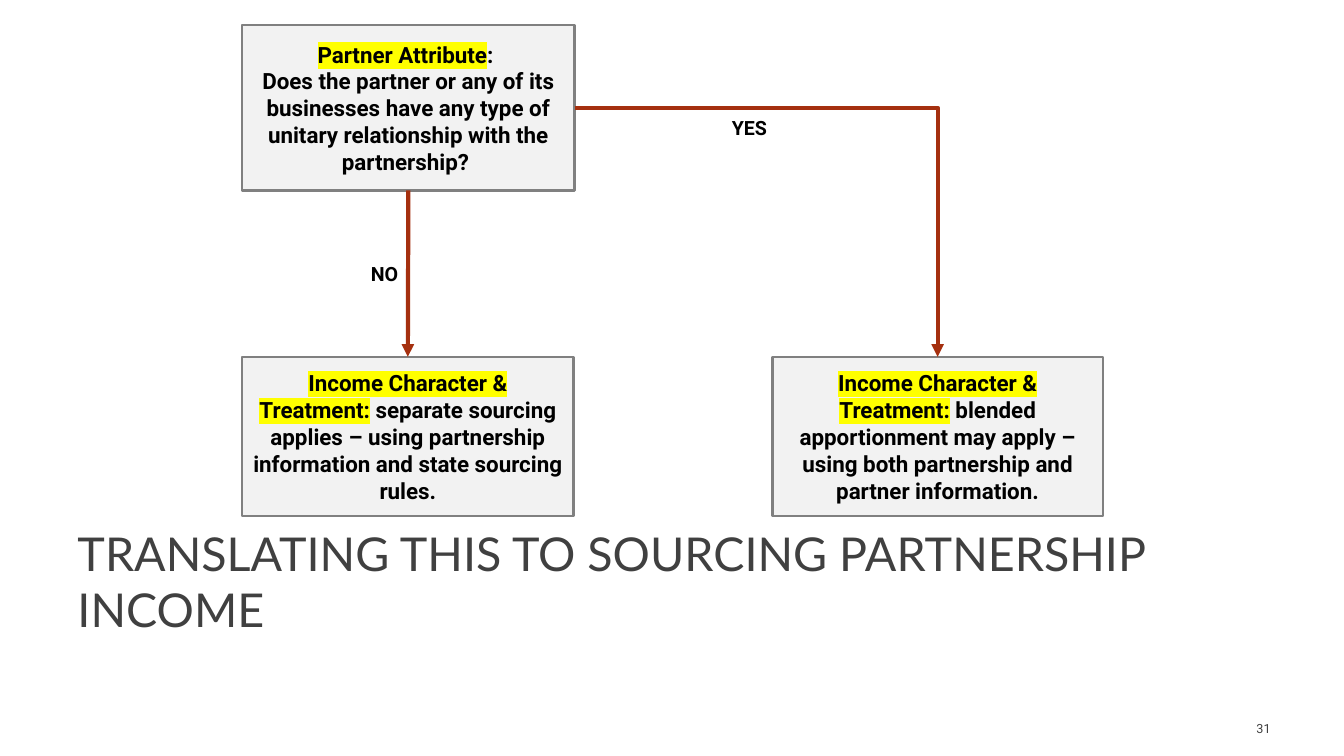
from dataclasses import dataclass

from lxml.etree import SubElement
from pptx import Presentation
from pptx.dml.color import RGBColor
from pptx.enum.shapes import MSO_CONNECTOR, MSO_SHAPE
from pptx.enum.text import MSO_ANCHOR, PP_ALIGN
from pptx.oxml.ns import qn
from pptx.util import Pt

PX = 9144
TOP, BOTTOM, RIGHT = 0, 2, 3


@dataclass(frozen=True)
class Theme:
    """Colours, fonts and type sizes of the slide."""

    ink: str = "000000"
    muted: str = "404040"
    panel: str = "F2F2F2"
    border: str = "808080"
    arrow: str = "A5300F"
    marker: str = "FFFF00"
    body_font: str = "Roboto"
    title_font: str = "Lato"
    title_size: float = 33.3
    box_size: float = 16
    label_size: float = 14
    number_size: float = 9


class DecisionSlide:
    """Draws the parts of a decision flow on one slide."""

    def __init__(self, slide, theme):
        """Keep the slide and its theme."""
        self.shapes = slide.shapes
        self.theme = theme

    def run(self, paragraph, text, size, color, font, bold=False, marked=False):
        """Add one styled run, highlighted if marked."""
        run = paragraph.add_run()
        run.text = text
        run.font.size = Pt(size)
        run.font.bold = bold
        run.font.color.rgb = RGBColor.from_string(color)
        if marked:
            properties = run.font._element
            highlight = SubElement(properties, qn("a:highlight"))
            SubElement(highlight, qn("a:srgbClr"), val=self.theme.marker)
        run.font.name = font

    def box(self, left, top, width, height, heading, *lines):
        """Add a bordered box with a highlighted heading and its statement."""
        theme = self.theme
        box = self.shapes.add_shape(
            MSO_SHAPE.RECTANGLE, left * PX, top * PX, width * PX, height * PX)
        box.shadow.inherit = False
        box.fill.solid()
        box.fill.fore_color.rgb = RGBColor.from_string(theme.panel)
        box.line.color.rgb = RGBColor.from_string(theme.border)
        box.line.width = Pt(1.75)
        frame = box.text_frame
        frame.word_wrap = True
        frame.vertical_anchor = MSO_ANCHOR.MIDDLE
        statement = frame.paragraphs[0]
        statement.alignment = PP_ALIGN.CENTER
        style = (theme.box_size, theme.ink, theme.body_font, True)
        self.run(statement, heading, *style, marked=True)
        for index, line in enumerate(lines):
            if index:
                statement.add_line_break()
            self.run(statement, line, *style)
        return box

    def text(self, left, top, width, height, text, size, color, font,
             bold=False, anchor=MSO_ANCHOR.TOP, align=PP_ALIGN.LEFT):
        """Add a text box with one paragraph."""
        frame = self.shapes.add_textbox(
            left * PX, top * PX, width * PX, height * PX).text_frame
        frame.word_wrap = True
        frame.vertical_anchor = anchor
        frame.paragraphs[0].alignment = align
        self.run(frame.paragraphs[0], text, size, color, font, bold)

    def label(self, left, top, width, answer):
        """Add the answer beside an arrow."""
        theme = self.theme
        self.text(left, top, width, 34, answer,
                  theme.label_size, theme.ink, theme.body_font, bold=True)

    def arrow(self, source, source_side, target, kind, preset):
        """Join a side of the source box to the top of the target box."""
        arrow = self.shapes.add_connector(kind, 0, 0, 0, 0)
        arrow.begin_connect(source, source_side)
        arrow.end_connect(target, TOP)
        arrow.line.color.rgb = RGBColor.from_string(self.theme.arrow)
        arrow.line.width = Pt(3)
        properties = arrow._element.spPr
        properties.find(qn("a:prstGeom")).set("prst", preset)
        SubElement(properties.find(qn("a:ln")), qn("a:tailEnd"), type="triangle")
        SubElement(properties, qn("a:effectLst"))


def main():
    """Build and save the slide."""
    deck = Presentation()
    deck.slide_width, deck.slide_height = 1333 * PX, 750 * PX
    theme = Theme()
    page = DecisionSlide(deck.slides.add_slide(deck.slide_layouts[6]), theme)

    outcome = "Income Character & Treatment:"
    blended = page.box(
        766, 354, 328, 158, outcome,
        " blended apportionment may apply – using both partnership and partner information.")
    separate = page.box(
        240, 354, 329, 158, outcome,
        " separate sourcing applies – using partnership information and state sourcing rules.")
    question = page.box(
        240, 25, 330, 164, "Partner Attribute", ": ",
        "Does the partner or any of its businesses have any type of unitary "
        "relationship with the partnership? ")

    page.arrow(question, BOTTOM, separate, MSO_CONNECTOR.STRAIGHT, "line")
    page.arrow(question, RIGHT, blended, MSO_CONNECTOR.ELBOW, "bentConnector2")
    page.label(358, 255, 51, "NO")
    page.label(716, 110, 63, "YES")

    page.text(67, 566, 1202, 71, "TRANSLATING THIS TO SOURCING PARTNERSHIP INCOME",
              theme.title_size, theme.muted, theme.title_font,
              anchor=MSO_ANCHOR.BOTTOM)
    page.text(1155, 703, 115, 40, "31",
              theme.number_size, theme.muted, theme.body_font,
              anchor=MSO_ANCHOR.MIDDLE, align=PP_ALIGN.RIGHT)
    deck.save("out.pptx")


if __name__ == "__main__":
    main()
